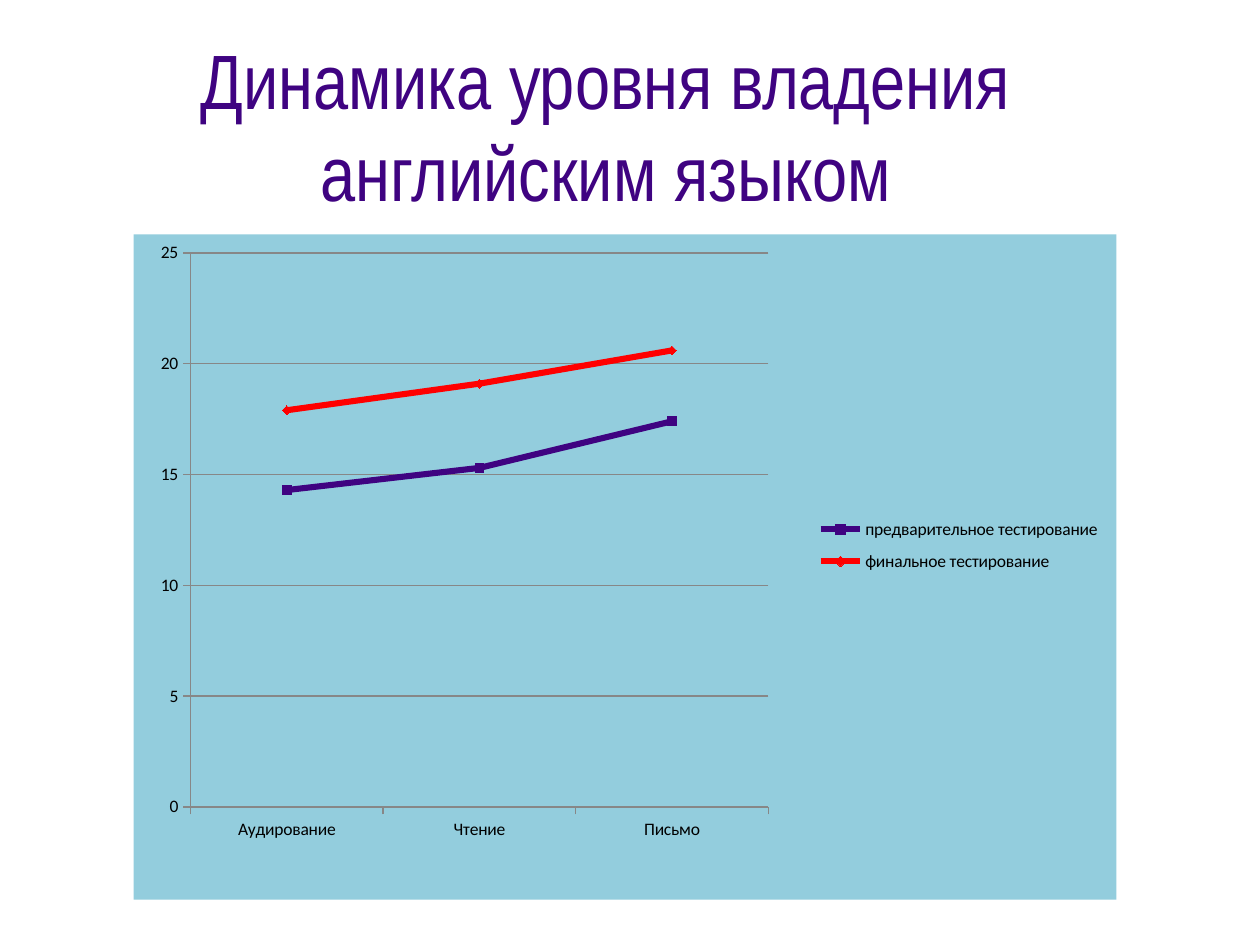
"""Build a slide comparing English test results before and after a course."""
from lxml import etree
from pptx import Presentation
from pptx import util as u
from pptx.chart.data import CategoryChartData
from pptx.dml.color import RGBColor
from pptx.enum import chart as ch, text as t
from pptx.oxml import parse_xml
from pptx.oxml.ns import nsdecls, qn

HEADING = "Динамика уровня владения английским языком"
SKILLS = ["Аудирование", "Чтение", "Письмо"]
TESTS = [
    ("предварительное тестирование", (14.3, 15.3, 17.4), "before", ch.XL_MARKER_STYLE.SQUARE),
    ("финальное тестирование", (17.9, 19.1, 20.6), "after", ch.XL_MARKER_STYLE.DIAMOND),
]
THEME = {
    "before": "3F0381", "after": "FF0000", "panel": "93CDDD",
    "grid": "878787", "ink": "000000", "paper": "FFFFFF",
    "heading_font": "Arial Narrow", "chart_font": "Calibri",
    "heading_size": 44, "chart_size": 10, "line": 3.5, "rule": 0.75, "marker": 5,
}
WIDTH, HEIGHT = 10, 7.5
HEADING_BOX = (0.028, 0.028, 0.906, 0.21)
CHART_BOX = (0.106, 0.248, 0.78, 0.704)
PLOT_BOX = (0.058, 0.028, 0.588, 0.833)
LEGEND_BOX = (0.69, 0.41, 0.3, 0.115)


def color(role):
    return RGBColor.from_string(THEME[role])


def place(box):
    return [u.Inches(share * side) for share, side in zip(box, (WIDTH, HEIGHT) * 2)]


def style_font(font, family, size, role):
    font.name, font.size = THEME[family], u.Pt(THEME[size])
    font.color.rgb = color(role)


def add_text(slide, content, box, *, family, size, role, align):
    frame = slide.shapes.add_textbox(*place(box)).text_frame
    frame.word_wrap = True
    paragraph = frame.paragraphs[0]
    paragraph.alignment = align
    run = paragraph.add_run()
    run.text = content
    style_font(run.font, family, size, role)


def set_layout(parent, box, inner=False):
    for old in parent.findall(qn("c:layout")):
        parent.remove(old)
    layout = parse_xml(f"<c:layout {nsdecls('c')}><c:manualLayout/></c:layout>")
    settings = [("layoutTarget", "inner")] if inner else []
    settings += [("xMode", "edge"), ("yMode", "edge"), *zip("xywh", box)]
    for tag, value in settings:
        etree.SubElement(layout[0], qn(f"c:{tag}")).set("val", str(value))
    parent.insert(0 if inner else 1, layout)


def style_rule(line):
    line.color.rgb = color("grid")
    line.width = u.Pt(THEME["rule"])


def add_results(slide):
    data = CategoryChartData(number_format="General")
    data.categories = SKILLS
    for name, scores, *_ in TESTS:
        data.add_series(name, scores)
    results = slide.shapes.add_chart(
        ch.XL_CHART_TYPE.LINE_MARKERS, *place(CHART_BOX), data).chart
    results.has_title = False
    style_font(results.font, "chart_font", "chart_size", "ink")
    panel = parse_xml(
        f"<c:spPr {nsdecls('c', 'a')}><a:solidFill><a:srgbClr val='{THEME['panel']}'/>"
        "</a:solidFill><a:ln><a:noFill/></a:ln></c:spPr>")
    results.element.find(qn("c:txPr")).addprevious(panel)

    results.has_legend = True
    results.legend.position = ch.XL_LEGEND_POSITION.RIGHT
    results.legend.include_in_layout = False
    set_layout(results.element.find(".//" + qn("c:legend")), LEGEND_BOX)
    set_layout(results.element.find(".//" + qn("c:plotArea")), PLOT_BOX, inner=True)

    scale = results.value_axis
    scale.minimum_scale, scale.maximum_scale, scale.major_unit = 0, 25, 5
    scale.has_major_gridlines = True
    style_rule(scale.major_gridlines.format.line)
    for axis in (scale, results.category_axis):
        axis.major_tick_mark = ch.XL_TICK_MARK.OUTSIDE
        axis.minor_tick_mark = ch.XL_TICK_MARK.NONE
        style_rule(axis.format.line)

    results.plots[0].vary_by_categories = False
    for series, (_, _, role, symbol) in zip(results.plots[0].series, TESTS):
        series.smooth = False
        series.format.line.color.rgb = color(role)
        series.format.line.width = u.Pt(THEME["line"])
        marker = series.marker
        marker.style, marker.size = symbol, THEME["marker"]
        marker.format.fill.solid()
        marker.format.fill.fore_color.rgb = color(role)
        marker.format.line.color.rgb = color(role)


def main():
    deck = Presentation()
    deck.slide_width, deck.slide_height = u.Inches(WIDTH), u.Inches(HEIGHT)
    slide = deck.slides.add_slide(deck.slide_layouts[6])
    slide.background.fill.solid()
    slide.background.fill.fore_color.rgb = color("paper")
    add_results(slide)
    add_text(slide, HEADING, HEADING_BOX, family="heading_font", size="heading_size",
             role="before", align=t.PP_ALIGN.CENTER)
    deck.save("out.pptx")


if __name__ == "__main__":
    main()
